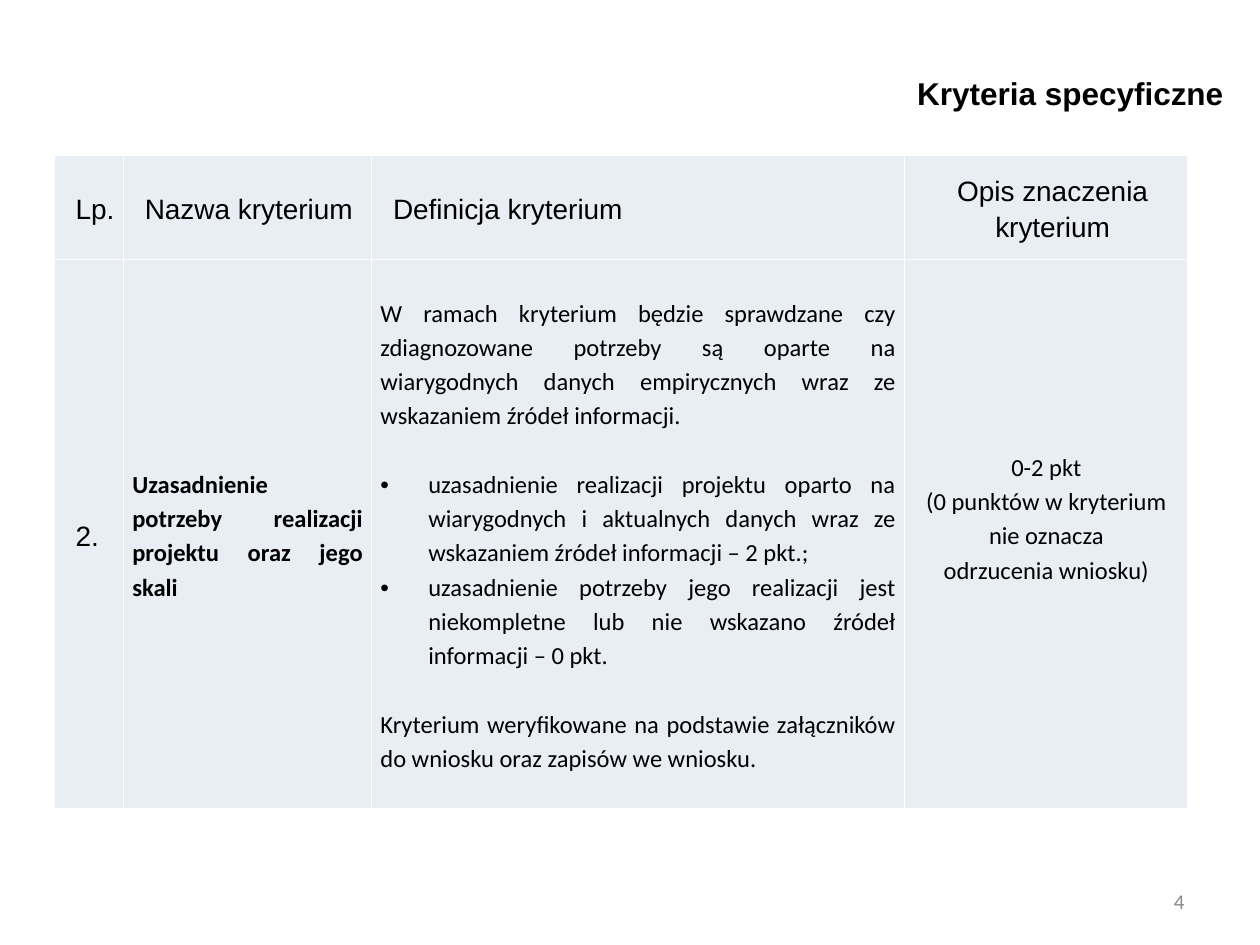
from lxml.etree import SubElement
from pptx import Presentation
from pptx.dml.color import RGBColor
from pptx.enum.text import MSO_ANCHOR as ANCHOR, MSO_AUTO_SIZE as AUTO, PP_ALIGN as ALIGN
from pptx.oxml.ns import qn
from pptx.util import Inches, Pt

COLORS = {"text": "000000", "cell": "E9EDF4", "border": "FFFFFF", "number": "898989"}
COLUMN_WIDTHS = [0.55, 1.97, 4.23, 2.25]
ROW_HEIGHTS = [0.83, 4.36]
LINE_GAP = 19.6  # points, one line of body text

HEADERS = ["Lp.", "Nazwa kryterium", "Definicja kryterium", "Opis znaczenia kryterium"]
NAME = "Uzasadnienie potrzeby realizacji projektu oraz jego skali"
# Text, bulleted, space before in points
DEFINITION = [
    ("W ramach kryterium będzie sprawdzane czy zdiagnozowane potrzeby są oparte na "
     "wiarygodnych danych empirycznych wraz ze wskazaniem źródeł informacji.", False, 0),
    ("uzasadnienie realizacji projektu oparto na wiarygodnych i aktualnych danych wraz ze "
     "wskazaniem źródeł informacji – 2 pkt.;", True, LINE_GAP),
    ("uzasadnienie potrzeby jego realizacji jest niekompletne lub nie wskazano źródeł "
     "informacji – 0 pkt.", True, 0),
    ("Kryterium weryfikowane na podstawie załączników do wniosku oraz zapisów we wniosku.",
     False, LINE_GAP),
]
POINTS = ["0-2 pkt", "(0 punktów w kryterium nie oznacza", "odrzucenia wniosku)"]


def set_font(p, name, size, color="text", bold=False):
    for r in p.runs:
        r.font.name, r.font.size, r.font.bold = name, Pt(size), bold
        r.font.color.rgb = RGBColor.from_string(COLORS[color])


def set_indent(p, left, first=0, bullet=False):
    pPr = p._p.get_or_add_pPr()
    pPr.set("marL", str(Inches(left)))
    pPr.set("indent", str(Inches(first)))
    if bullet:
        SubElement(pPr, qn("a:buFont"), typeface="Arial")
        SubElement(pPr, qn("a:buChar"), char="•")


def add_paragraph(cell, text, align, before=0):
    tf = cell.text_frame
    p = tf.add_paragraph() if tf.text else tf.paragraphs[0]
    p.text = text
    p.alignment = align
    p.line_spacing = 1.15
    if before:
        p.space_before = Pt(before)
    return p


def add_label(cell, text, align=ALIGN.LEFT):
    p = add_paragraph(cell, text, align)
    p.space_after = Pt(10)
    set_indent(p, 0.1)
    set_font(p, "Arial", 16)


def add_body(cell, text, align=ALIGN.JUSTIFY, bullet=False, before=0, bold=False):
    p = add_paragraph(cell, text, align, before)
    if bullet:
        set_indent(p, 0.38, -0.38, bullet=True)
    set_font(p, "Calibri", 14, bold=bold)


def style_cell(cell):
    cell.vertical_anchor = ANCHOR.MIDDLE
    cell.margin_left = cell.margin_right = Inches(0.07)
    cell.margin_top = cell.margin_bottom = 0
    tcPr = cell._tc.get_or_add_tcPr()
    for side in ("lnL", "lnR", "lnT", "lnB"):
        ln = SubElement(tcPr, qn(f"a:{side}"), w=str(Pt(1)))
        SubElement(SubElement(ln, qn("a:solidFill")), qn("a:srgbClr"), val=COLORS["border"])
    cell.fill.solid()
    cell.fill.fore_color.rgb = RGBColor.from_string(COLORS["cell"])


def add_criteria_table(slide):
    table = slide.shapes.add_table(
        len(ROW_HEIGHTS), len(COLUMN_WIDTHS), Inches(0.43), Inches(1.23),
        Inches(sum(COLUMN_WIDTHS)), Inches(sum(ROW_HEIGHTS))).table
    table.first_row = table.horz_banding = False
    for column, width in zip(table.columns, COLUMN_WIDTHS):
        column.width = Inches(width)
    for row, height in zip(table.rows, ROW_HEIGHTS):
        row.height = Inches(height)
    for cell in table.iter_cells():
        style_cell(cell)

    # Header row
    for i, text in enumerate(HEADERS):
        add_label(table.cell(0, i), text, ALIGN.CENTER if i == 3 else ALIGN.LEFT)

    # Criterion row
    number, name, definition, points = table.rows[1].cells
    add_label(number, "2.")
    add_body(name, NAME, bold=True)
    for text, bullet, before in DEFINITION:
        add_body(definition, text, bullet=bullet, before=before)
    for text in POINTS:
        add_body(points, text, ALIGN.CENTER)
    points.margin_bottom = Pt(LINE_GAP)


def set_title(slide, text):
    sp = slide.shapes.title
    sp.left, sp.top, sp.width, sp.height = map(Inches, (6.42, 0.54, 3.39, 0.5))
    tf = sp.text_frame
    tf.text = text
    tf.auto_size = AUTO.NONE
    tf.vertical_anchor = ANCHOR.TOP
    p = tf.paragraphs[0]
    p.alignment = ALIGN.RIGHT
    set_font(p, "Arial", 18, bold=True)


def add_page_number(slide, text):
    sp = slide.shapes.add_textbox(Inches(7.17), Inches(6.95), Inches(2.33), Inches(0.4))
    tf = sp.text_frame
    tf.text = text
    tf.word_wrap = True
    tf.vertical_anchor = ANCHOR.MIDDLE
    p = tf.paragraphs[0]
    p.alignment = ALIGN.RIGHT
    set_font(p, "Calibri", 12, "number")


def main():
    prs = Presentation()
    prs.slide_width, prs.slide_height = Inches(10), Inches(7.5)
    slide = prs.slides.add_slide(prs.slide_layouts[5])
    set_title(slide, "Kryteria specyficzne")
    add_criteria_table(slide)
    add_page_number(slide, "4")
    prs.save("out.pptx")


if __name__ == "__main__":
    main()
